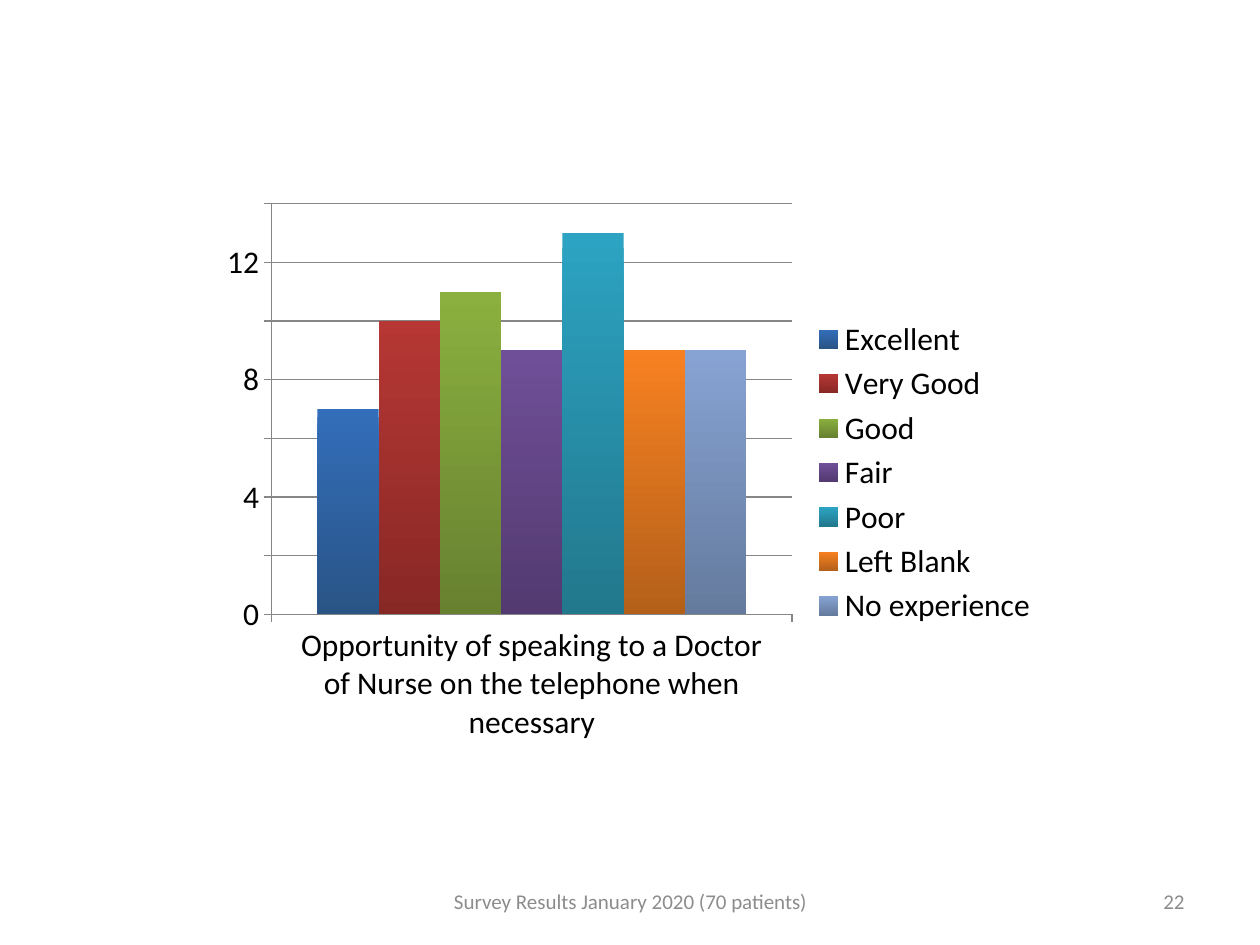
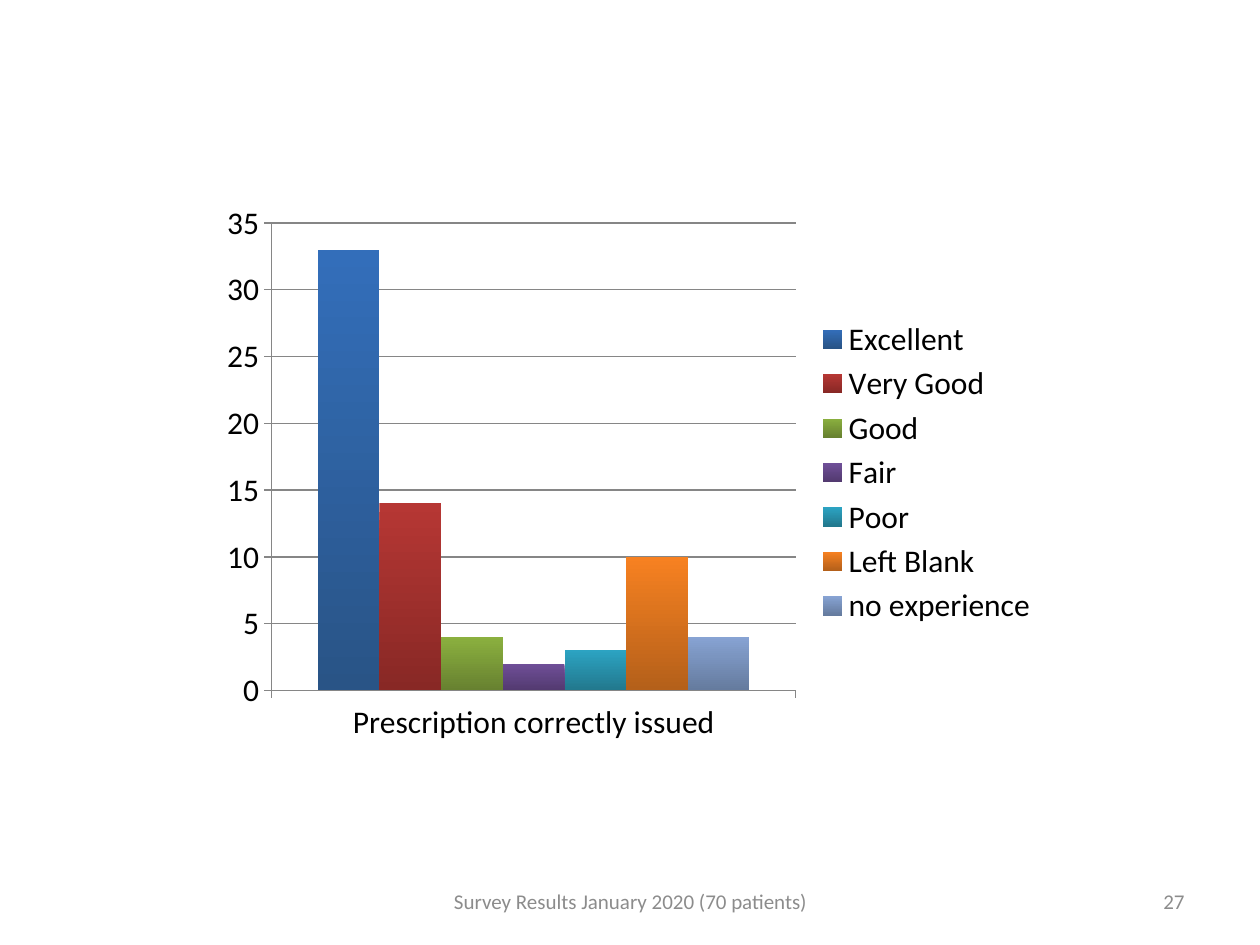
from dataclasses import dataclass

from pptx import Presentation
from pptx.chart.data import CategoryChartData
from pptx.dml.color import RGBColor
from pptx.enum.chart import XL_CHART_TYPE as ChartType
from pptx.enum.chart import XL_LEGEND_POSITION as LegendPosition
from pptx.enum.chart import XL_TICK_MARK as TickMark
from pptx.enum.text import MSO_ANCHOR as Anchor
from pptx.enum.text import PP_ALIGN as Align
from pptx.util import Emu, Pt

EMU_PER_PX = 9144  # 100 px to the inch


@dataclass(frozen=True)
class Theme:
    font: str = "Calibri"
    chart_size: int = 18
    footer_size: int = 12
    text: str = "000000"
    footer: str = "8C8C8C"
    axis: str = "868686"
    # Top and bottom colour of each answer's column
    columns: tuple[tuple[str, str], ...] = (
        ("336EBA", "295486"),
        ("B63734", "882825"),
        ("8BB03F", "678130"),
        ("6F4F98", "533A70"),
        ("2CA3C2", "22788D"),
        ("F78121", "B4601A"),
        ("87A3D3", "657B9E"),
    )


@dataclass(frozen=True)
class Box:
    left: int
    top: int
    width: int
    height: int

    def emu(self) -> tuple[Emu, ...]:
        sides = (self.left, self.top, self.width, self.height)
        return tuple(Emu(side * EMU_PER_PX) for side in sides)


@dataclass(frozen=True)
class Question:
    page: int
    wording: str
    counts: tuple[int, ...]
    axis_top: int
    axis_step: int
    last_answer: str


THEME = Theme()
PAGE_SIZE = Box(0, 0, 1000, 750)
CHART_BOX = Box(167, 153, 667, 444)
NUMBER_BOX = Box(717, 695, 233, 40)
FOOTER_BOX = Box(342, 695, 317, 40)
FOOTER = "Survey Results January 2020 (70 patients)"
ANSWERS = ("Excellent", "Very Good", "Good", "Fair", "Poor", "Left Blank")
QUESTIONS = (
    Question(
        22,
        "Opportunity of speaking to a Doctor of Nurse on the telephone when necessary",
        (7, 10, 11, 9, 13, 9, 9), 14, 2, "No experience",
    ),
    Question(
        27, "Prescription correctly issued",
        (33, 14, 4, 2, 3, 10, 4), 35, 5, "no experience",
    ),
)


def color(code: str) -> RGBColor:
    return RGBColor.from_string(code)


def add_text(page, box: Box, text: str, *, align: Align,
             size: int = THEME.footer_size, fill: str = THEME.footer) -> None:
    frame = page.shapes.add_textbox(*box.emu()).text_frame
    frame.word_wrap = True
    frame.vertical_anchor = Anchor.MIDDLE
    para = frame.paragraphs[0]
    para.alignment = align
    span = para.add_run()
    span.text = text
    span.font.name = THEME.font
    span.font.size = Pt(size)
    span.font.color.rgb = color(fill)


def style_line(line) -> None:
    line.color.rgb = color(THEME.axis)
    line.width = Pt(0.75)


def shade_column(series, top: str, bottom: str) -> None:
    fill = series.format.fill
    fill.gradient()
    fill.gradient_angle = 270
    for stop, code in zip(fill.gradient_stops, (top, bottom)):
        stop.color.rgb = color(code)
    series.format.line.fill.background()


def add_answer_chart(page, question: Question) -> None:
    data = CategoryChartData()
    data.categories = [question.wording]
    for answer, count in zip((*ANSWERS, question.last_answer), question.counts):
        data.add_series(answer, [count])
    chart = page.shapes.add_chart(
        ChartType.COLUMN_CLUSTERED, *CHART_BOX.emu(), data).chart
    chart.has_title = False
    chart.font.name = THEME.font
    chart.font.size = Pt(THEME.chart_size)
    chart.font.color.rgb = color(THEME.text)

    # Legend
    chart.has_legend = True
    chart.legend.position = LegendPosition.RIGHT
    chart.legend.include_in_layout = False

    # Axes
    for axis in (chart.category_axis, chart.value_axis):
        axis.major_tick_mark = TickMark.OUTSIDE
        axis.minor_tick_mark = TickMark.NONE
        style_line(axis.format.line)
    counts_axis = chart.value_axis
    counts_axis.minimum_scale = 0
    counts_axis.maximum_scale = question.axis_top
    counts_axis.major_unit = question.axis_step
    counts_axis.has_major_gridlines = True
    style_line(counts_axis.major_gridlines.format.line)

    # Columns
    plot = chart.plots[0]
    plot.gap_width = 150
    plot.overlap = 0
    plot.vary_by_categories = False
    for series, shades in zip(plot.series, THEME.columns):
        shade_column(series, *shades)


def add_question_page(deck, question: Question) -> None:
    page = deck.slides.add_slide(deck.slide_layouts.get_by_name("Blank"))
    add_answer_chart(page, question)
    add_text(page, NUMBER_BOX, str(question.page), align=Align.RIGHT)
    add_text(page, FOOTER_BOX, FOOTER, align=Align.CENTER)


def main() -> None:
    deck = Presentation()
    _, _, deck.slide_width, deck.slide_height = PAGE_SIZE.emu()
    for question in QUESTIONS:
        add_question_page(deck, question)
    deck.save("out.pptx")


if __name__ == "__main__":
    main()
